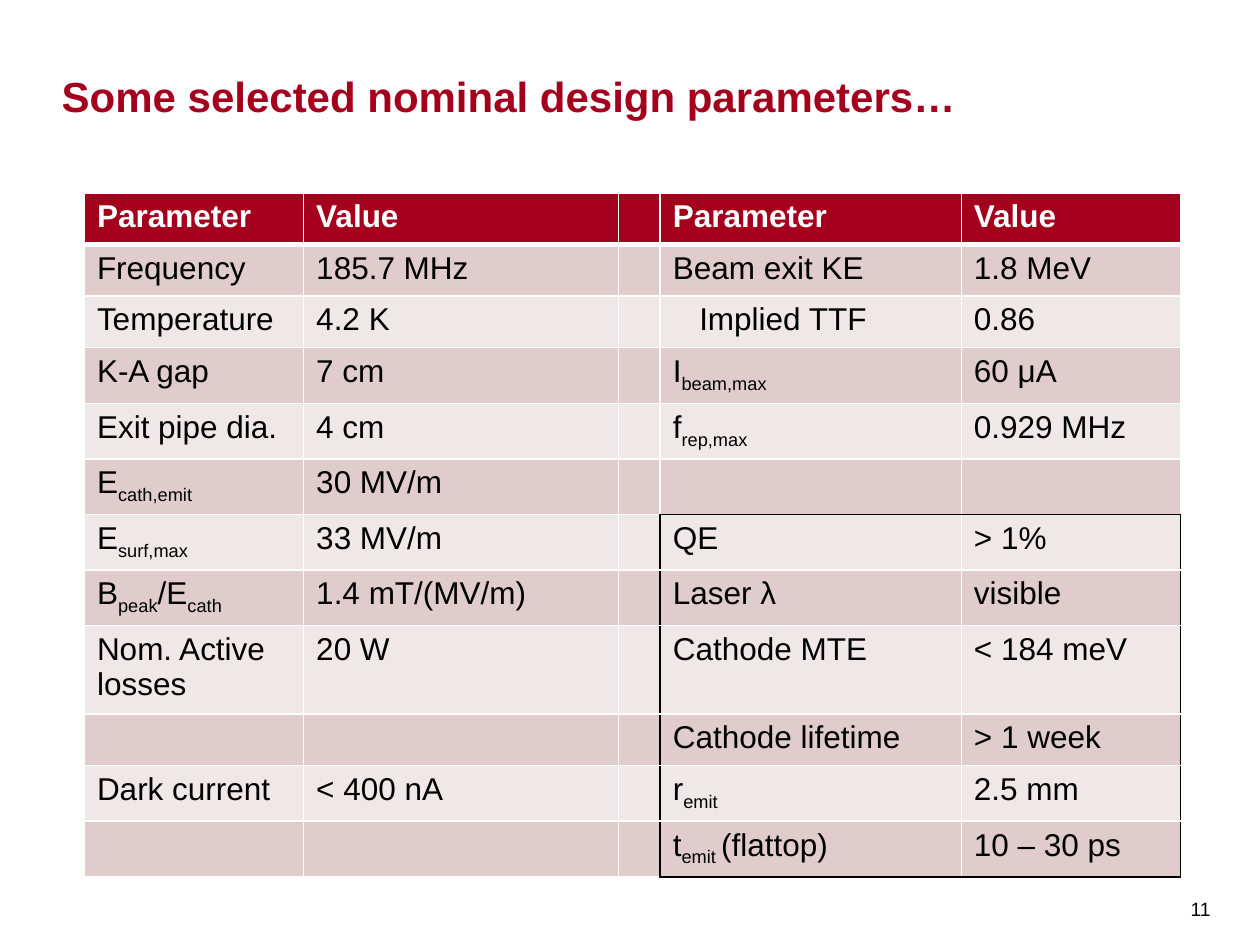
"""Build the slide of selected nominal design parameters."""
from lxml.etree import SubElement
from pptx import Presentation
from pptx.dml.color import RGBColor
from pptx.enum.text import MSO_ANCHOR
from pptx.oxml.ns import qn
from pptx.util import Inches, Pt

CRIMSON = RGBColor(0xA4, 0x00, 0x1D)
ROSE = RGBColor(0xE0, 0xCC, 0xCD)
PALE_ROSE = RGBColor(0xF0, 0xE7, 0xE8)
WHITE = RGBColor(0xFF, 0xFF, 0xFF)
BLACK = RGBColor(0x00, 0x00, 0x00)

COLUMN_WIDTHS = [1.74, 2.5, 0.33, 2.39, 1.74]
ROW_HEIGHT = 0.41
BOX_TOP, BOX_LEFT = 6, 3
SUBSCRIPT_MARK = "~"
ROWS = [
    ["Parameter", "Value", "", "Parameter", "Value"],
    ["Frequency", "185.7 MHz", "", "Beam exit KE", "1.8 MeV"],
    ["Temperature", "4.2 K", "", "Implied TTF", "0.86"],
    ["K-A gap", "7 cm", "", "I~beam,max~", "60 μA"],
    ["Exit pipe dia.", "4 cm", "", "f~rep,max~", "0.929 MHz"],
    ["E~cath,emit~", "30 MV/m", "", "", ""],
    ["E~surf,max~", "33 MV/m", "", "QE", "> 1%"],
    ["B~peak~/E~cath~", "1.4 mT/(MV/m)", "", "Laser λ", "visible"],
    ["Nom. Active losses", "20 W", "", "Cathode MTE", "< 184 meV"],
    ["", "", "", "Cathode lifetime", "> 1 week"],
    ["Dark current", "< 400 nA", "", "r~emit~", "2.5 mm"],
    ["", "", "", "t~emit ~(flattop)", "10 – 30 ps"],
]


def set_font(paragraph, size, color, bold=False):
    font = paragraph.font
    font.name = "Arial"
    font.size = Pt(size)
    font.bold = bold
    font.color.rgb = color


def add_border(cell, side, color, width):
    line = SubElement(cell._tc.get_or_add_tcPr(), qn(f"a:ln{side}"), w=str(Pt(width)))
    fill = SubElement(line, qn("a:solidFill"))
    SubElement(fill, qn("a:srgbClr"), val=str(color))


presentation = Presentation()
presentation.slide_width = Inches(10)
presentation.slide_height = Inches(7.5)
slide = presentation.slides.add_slide(presentation.slide_layouts[6])

text_boxes = [
    ("Some selected nominal design parameters…", (0.49, 0.14, 8.86, 0.82),
     (0, 0, 0, 0), MSO_ANCHOR.BOTTOM, 24, CRIMSON, True),
    ("11", (9.37, 6.91, 0.35, 0.59),
     (0.08, 0.06, 0.08, 0.05), MSO_ANCHOR.MIDDLE, 11, BLACK, False),
]
for text, position, margins, anchor, size, color, bold in text_boxes:
    shape = slide.shapes.add_textbox(*map(Inches, position))
    frame = shape.text_frame
    frame.word_wrap = True
    frame.vertical_anchor = anchor
    frame.margin_left, frame.margin_top, frame.margin_right, frame.margin_bottom = map(Inches, margins)
    frame.text = text
    set_font(frame.paragraphs[0], size, color, bold)

table = slide.shapes.add_table(
    len(ROWS), len(COLUMN_WIDTHS), Inches(0.67), Inches(1.53),
    Inches(sum(COLUMN_WIDTHS)), Inches(ROW_HEIGHT * len(ROWS)),
).table
for column, width in zip(table.columns, COLUMN_WIDTHS):
    column.width = Inches(width)

for row_index, texts in enumerate(ROWS):
    table.rows[row_index].height = Inches(ROW_HEIGHT)
    is_header = row_index == 0
    in_box_rows = row_index >= BOX_TOP
    for column_index, text in enumerate(texts):
        cell = table.cell(row_index, column_index)
        in_box_columns = column_index >= BOX_LEFT
        boxed = {
            "L": in_box_rows and column_index == BOX_LEFT,
            "R": in_box_rows and column_index in (BOX_LEFT - 1, len(texts) - 1),
            "T": in_box_columns and row_index == BOX_TOP,
            "B": in_box_columns and row_index in (BOX_TOP - 1, len(ROWS) - 1),
        }
        for side, is_boxed in boxed.items():
            under_header = (row_index, side) in ((0, "B"), (1, "T"))
            add_border(cell, side, BLACK if is_boxed else WHITE, 3 if under_header else 1)
        cell.fill.solid()
        cell.fill.fore_color.rgb = CRIMSON if is_header else ROSE if row_index % 2 else PALE_ROSE

        paragraph = cell.text_frame.paragraphs[0]
        set_font(paragraph, 18, WHITE if is_header else BLACK, is_header)
        for part_index, part in enumerate(text.split(SUBSCRIPT_MARK)):
            if part:
                run = paragraph.add_run()
                run.text = part
                if part_index % 2:
                    run.font._element.set("baseline", "-25000")

table.cell(2, BOX_LEFT).margin_left = Inches(0.31)

presentation.save("out.pptx")
